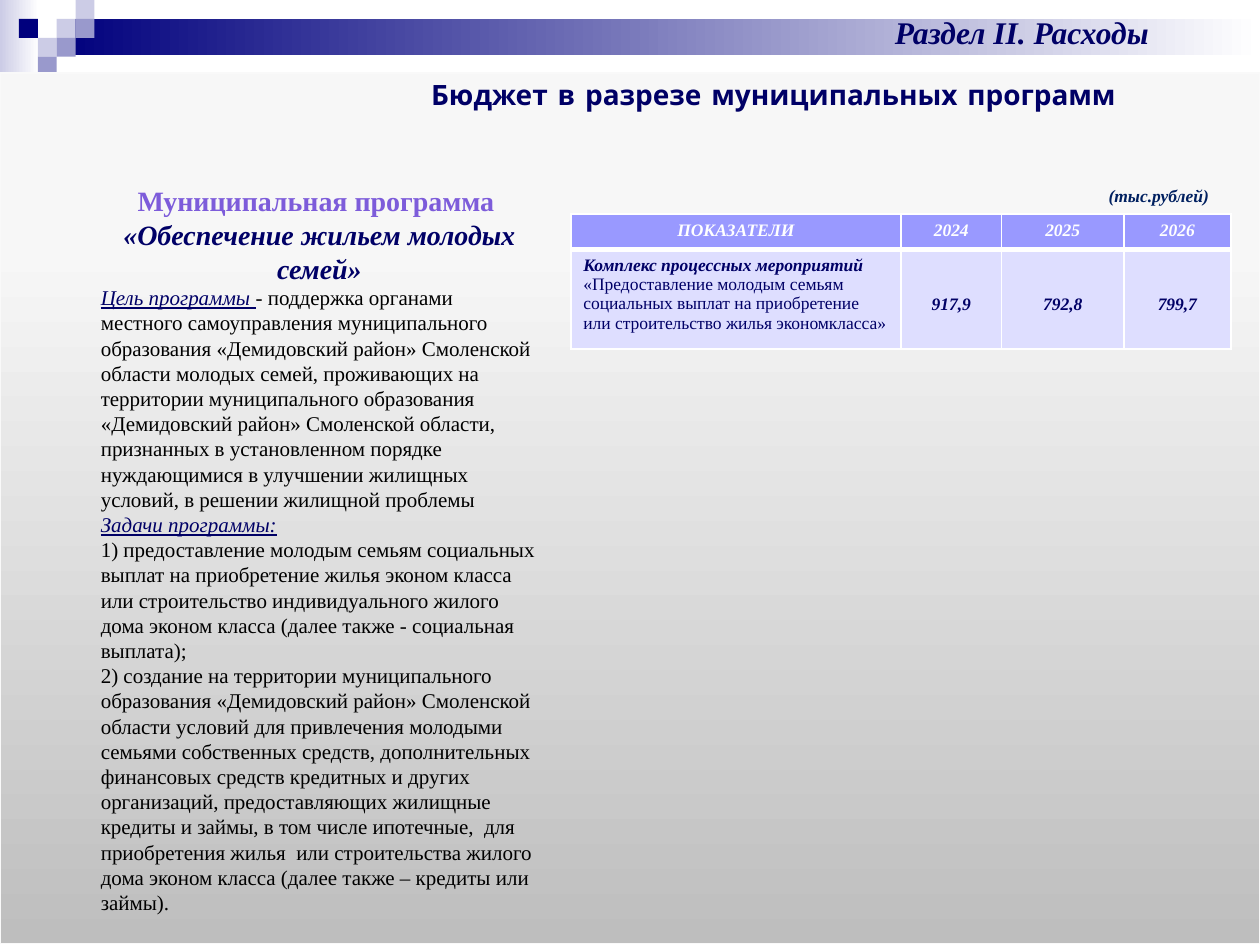
import copy
import pptx
import pptx.util
from pptx.dml.color import RGBColor
from pptx.enum.shapes import MSO_SHAPE
from pptx.enum.text import MSO_ANCHOR, MSO_AUTO_SIZE, PP_ALIGN
from pptx.oxml.ns import qn
from pptx.oxml.xmlchemy import OxmlElement
from pptx.util import Inches, Pt

SERIF = "Times New Roman"
WHITE = RGBColor(0xFF, 0xFF, 0xFF)
BLACK = RGBColor(0, 0, 0)
INK = RGBColor(0x00, 0x00, 0x66)
NOTE = RGBColor(0x00, 0x20, 0x60)
VIOLET = RGBColor(0x7D, 0x5C, 0xDA)
NAVY = RGBColor(0x00, 0x00, 0x7D)
PALE = RGBColor(0xCC, 0xCC, 0xE6)
MID = RGBColor(0x99, 0x99, 0xCC)
GREY = RGBColor(0xBE, 0xBE, 0xBE)
LIGHT = RGBColor(0xF7, 0xF7, 0xF7)
EDGE = RGBColor(0xF9, 0xF9, 0xF9)
HEAD_FILL = RGBColor(0x99, 0x99, 0xFF)
BODY_FILL = RGBColor(0xDE, 0xDE, 0xFF)

UNIT = 0.15
SQUARES = [(3, 1, PALE), (4, 0, PALE), (4, 1, MID), (2, 2, PALE),
           (1, 1, NAVY), (3, 2, MID), (2, 3, MID)]

PROGRAM = [
    (16, [("Муниципальная программа ", VIOLET, "b")]),
    (16, [("«Обеспечение жильем молодых семей»", INK, "bi")]),
    (12, [("Цель программы ", INK, "iu"),
          ("- поддержка органами местного самоуправления муниципального образования "
           "«Демидовский район» Смоленской области молодых семей, проживающих на территории "
           "муниципального образования «Демидовский район» Смоленской области, признанных "
           "в установленном порядке нуждающимися в улучшении жилищных условий, "
           "в решении жилищной проблемы", BLACK, "")]),
    (12, [("Задачи программы:", INK, "iu")]),
    (12, [("1) предоставление молодым семьям социальных выплат на приобретение жилья эконом "
           "класса или строительство индивидуального жилого дома эконом класса "
           "(далее также - социальная выплата);", BLACK, "")]),
    (12, [("2) создание на территории муниципального образования «Демидовский район» "
           "Смоленской области условий для привлечения молодыми семьями собственных средств, "
           "дополнительных финансовых средств кредитных и других организаций, предоставляющих "
           "жилищные кредиты и займы, в том числе ипотечные,  для приобретения жилья  или "
           "строительства жилого дома эконом класса (далее также – кредиты или займы).",
           BLACK, "")]),
]

COLUMNS = [2.62, 0.8, 0.97, 0.85]
ROWS = [0.28, 0.79]
TABLE = [
    [[("ПОКАЗАТЕЛИ", WHITE, "bi")]] + [[(y, WHITE, "bi")] for y in ("2024", "2025", "2026")],
    [[("Комплекс процессных мероприятий ", INK, "bi"),
      ("«Предоставление молодым семьям социальных выплат на приобретение или "
       "строительство жилья экономкласса»", INK, "")]]
    + [[(v, INK, "bi")] for v in ("917,9", "792,8", "799,7")],
]


def write(p, runs, size, name=SERIF, align=PP_ALIGN.LEFT):
    p.alignment = align
    p.font.size = Pt(size)
    p.font.name = name
    for text, color, style in runs:
        r = p.add_run()
        r.text = text
        r.font.size = Pt(size)
        r.font.name = name
        r.font.color.rgb = color
        r.font.bold = "b" in style
        r.font.italic = "i" in style
        r.font.underline = "u" in style


def add_block(s, x, y, w, h, kind=MSO_SHAPE.RECTANGLE):
    sp = s.shapes.add_shape(kind, Inches(x), Inches(y), Inches(w), Inches(h))
    sp.shadow.inherit = False
    sp.line.fill.background()
    return sp


def shade(sp, stops, angle=0):
    sp.fill.gradient()
    sp.fill.gradient_angle = angle
    gs_list = sp._element.spPr.find(".//" + qn("a:gsLst"))
    for _ in stops[2:]:
        gs_list.append(copy.deepcopy(gs_list[-1]))
    for stop, (position, color) in zip(sp.fill.gradient_stops, stops):
        stop.position = position
        stop.color.rgb = color


def add_backdrop(s):
    shade(add_block(s, 0, 0, 0.31, 0.58), [(0, PALE), (1, WHITE)])
    shade(add_block(s, 0.45, UNIT, 9.55, 0.29), [(0, NAVY), (1, WHITE)])
    for col, row, color in SQUARES:
        sp = add_block(s, col * UNIT, row * UNIT, UNIT, UNIT)
        sp.fill.solid()
        sp.fill.fore_color.rgb = color
    panel = add_block(s, 0, 0.58, 10, 6.91, MSO_SHAPE.FLOWCHART_PROCESS)
    shade(panel, [(0, GREY), (0.8, LIGHT), (1, LIGHT)], 90)
    panel.line.color.rgb = EDGE
    panel.line.width = Pt(0.75)


def fill_placeholder(sp, box):
    sp.left, sp.top, sp.width, sp.height = (Inches(v) for v in box)
    tf = sp.text_frame
    tf.auto_size = MSO_AUTO_SIZE.NONE
    tf.vertical_anchor = MSO_ANCHOR.TOP
    sp._element.getparent().append(sp._element)
    return tf


def add_program(sp):
    tf = fill_placeholder(sp, (0.7, 1.41, 3.67, 6.16))
    for i, (size, runs) in enumerate(PROGRAM):
        p = tf.add_paragraph() if i else tf.paragraphs[0]
        write(p, runs, size, align=PP_ALIGN.CENTER if size == 16 else PP_ALIGN.LEFT)
        p.space_before = Pt(0)
        p.line_spacing = 1.0
        pPr = p._p.get_or_add_pPr()
        pPr.set("marL", "0")
        pPr.set("indent", "0")
        pPr.insert_element_before(OxmlElement("a:buNone"), "a:tabLst", "a:defRPr")


def add_label(s, box, runs, size, name=SERIF, align=PP_ALIGN.CENTER, wrap=True):
    tf = s.shapes.add_textbox(*(Inches(v) for v in box)).text_frame
    tf.word_wrap = wrap
    write(tf.paragraphs[0], runs, size, name, align)


def set_borders(cell, bottom):
    tcPr = cell._tc.get_or_add_tcPr()
    for i, (side, width) in enumerate([("L", 1), ("R", 1), ("T", 1), ("B", bottom)]):
        ln = OxmlElement("a:ln" + side)
        ln.set("w", str(Pt(width)))
        fill = OxmlElement("a:solidFill")
        color = OxmlElement("a:srgbClr")
        color.set("val", str(WHITE))
        fill.append(color)
        ln.append(fill)
        tcPr.insert(i, ln)


def add_indicators(s):
    table = s.shapes.add_table(len(ROWS), len(COLUMNS), Inches(4.53), Inches(1.7),
                               Inches(sum(COLUMNS)), Inches(sum(ROWS))).table
    for column, width in zip(table.columns, COLUMNS):
        column.width = Inches(width)
    for i, (height, cells) in enumerate(zip(ROWS, TABLE)):
        table.rows[i].height = Inches(height)
        for j, runs in enumerate(cells):
            cell = table.cell(i, j)
            cell.fill.solid()
            cell.fill.fore_color.rgb = BODY_FILL if i else HEAD_FILL
            left = i and not j
            write(cell.text_frame.paragraphs[0], runs, 10,
                  align=PP_ALIGN.LEFT if left else PP_ALIGN.CENTER)
            if i and j:
                cell.vertical_anchor = MSO_ANCHOR.MIDDLE
                cell.margin_top = Inches(0.14)
            set_borders(cell, 1 if i else 3)


def main():
    prs = pptx.Presentation()
    prs.slide_width, prs.slide_height = Inches(10), Inches(7.5)
    s = prs.slides.add_slide(prs.slide_layouts[1])
    add_backdrop(s)
    add_program(s.placeholders[1])
    tf = fill_placeholder(s.shapes.title, (6.26, 0.05, 3.7, 0.4))
    write(tf.paragraphs[0], [("Раздел II. Расходы", INK, "bi")], 18, align=PP_ALIGN.CENTER)
    add_label(s, (2.54, 0.57, 7.2, 0.37),
              [("Бюджет в разрезе муниципальных программ", INK, "b")], 16, "Comic Neue")
    add_indicators(s)
    add_label(s, (8.7, 1.42, 1.02, 0.27), [("(тыс.рублей)", NOTE, "bi")], 10,
              align=PP_ALIGN.LEFT, wrap=False)
    prs.save("out.pptx")


if __name__ == "__main__":
    main()
